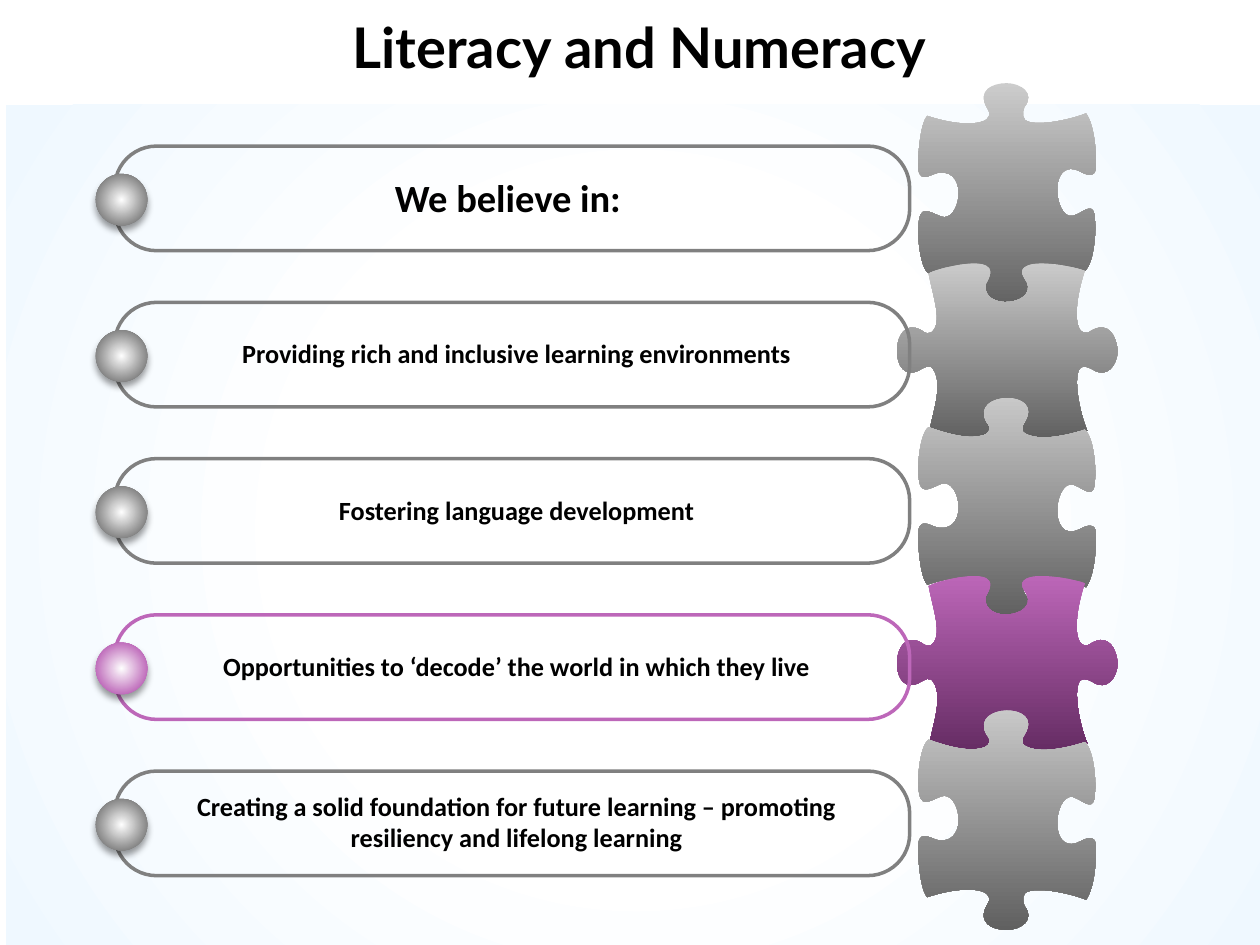
from lxml import etree
from pptx import Presentation
from pptx.dml.color import RGBColor
from pptx.enum.shapes import MSO_SHAPE
from pptx.enum.text import MSO_AUTO_SIZE, PP_ALIGN
from pptx.oxml.ns import qn
from pptx.util import Inches, Pt

RECTANGLE = MSO_SHAPE.RECTANGLE
ROUNDED = MSO_SHAPE.ROUNDED_RECTANGLE
OVAL = MSO_SHAPE.OVAL
CENTER = PP_ALIGN.CENTER
GROW = MSO_AUTO_SIZE.SHAPE_TO_FIT_TEXT

COLORS = {
    "white": "FFFFFF", "sky": "EFF8FF", "text": "000000",
    "gray": "808080", "light_gray": "CCCCCC", "dark_gray": "606060",
    "purple": "BD67B9", "dark_purple": "652C63",
}

ROW_TOP, ROW_STEP = 1.16, 1.24
BAR_LEFT, BAR_WIDTH, BAR_HEIGHT = 0.91, 6.31, 0.83
BALL_SIZE = 0.41
PIECE_STEP = 2.48   # distance between pieces of the same form
MIRROR_SUM = 5.56   # y of a point plus y of its mirrored point

# Text, size, centre of the text box, its width and height, accent colour
ROWS = [
    ("We believe in:", 22, 4.03, 2.29, 0.47, "gray"),
    ("Providing rich and inclusive learning environments", 15, 4.1, 5.81, 0.35, "gray"),
    ("Fostering language development", 15, 4.1, 5.81, 0.35, "gray"),
    ("Opportunities to ‘decode’ the world in which they live", 15, 4.1, 5.81, 0.35, "purple"),
    ("Creating a solid foundation for future learning – promoting resiliency "
     "and lifelong learning", 15, 4.1, 5.81, 0.61, "gray"),
]

# Puzzle outlines: start point, then three points for each Bézier curve
TALL_PIECE = [
    (7.99, 0.66),
    (8.1, 0.66), (8.22, 0.74), (8.13, 0.85), (8.12, 0.87), (8.12, 0.89), (8.12, 0.92),
    (8.12, 1.02), (8.44, 0.97), (8.62, 0.9), (8.69, 1), (8.7, 1.22), (8.7, 1.31),
    (8.7, 1.39), (8.66, 1.41), (8.57, 1.36), (8.3, 1.23), (8.37, 1.82), (8.55, 1.7),
    (8.6, 1.68), (8.69, 1.59), (8.69, 1.75), (8.7, 1.8), (8.69, 2.08), (8.61, 2.15),
    (8.52, 2.12), (8.24, 2.04), (8.12, 2.13), (8.11, 2.15), (8.11, 2.18), (8.13, 2.21),
    (8.3, 2.47), (7.69, 2.46), (7.83, 2.21), (7.87, 2.17), (7.86, 2.11), (7.78, 2.1),
    (7.7, 2.08), (7.56, 2.1), (7.37, 2.17), (7.3, 2.12), (7.28, 1.86), (7.29, 1.79),
    (7.3, 1.62), (7.37, 1.68), (7.47, 1.72), (7.62, 1.77), (7.69, 1.35), (7.46, 1.37),
    (7.4, 1.37), (7.31, 1.46), (7.29, 1.35), (7.28, 1.28), (7.3, 0.98), (7.36, 0.92),
    (7.63, 1.01), (7.83, 0.99), (7.85, 0.92), (7.86, 0.91), (7.85, 0.88), (7.83, 0.85),
    (7.76, 0.72), (7.87, 0.66), (7.99, 0.66),
]
WIDE_PIECE = [
    (8.87, 2.78),
    (8.87, 2.9), (8.78, 3.01), (8.67, 2.93), (8.65, 2.92), (8.63, 2.91), (8.6, 2.91),
    (8.5, 2.91), (8.56, 3.26), (8.63, 3.42), (8.54, 3.43), (8.33, 3.49), (8.23, 3.48),
    (8.17, 3.47), (8.08, 3.43), (8.14, 3.35), (8.28, 3.09), (7.74, 3.1), (7.82, 3.32),
    (7.86, 3.4), (7.91, 3.44), (7.76, 3.48), (7.69, 3.49), (7.47, 3.42), (7.38, 3.41),
    (7.4, 3.28), (7.5, 3.02), (7.39, 2.91), (7.37, 2.9), (7.35, 2.91), (7.31, 2.93),
    (7.05, 3.09), (7.06, 2.48), (7.31, 2.62), (7.35, 2.65), (7.37, 2.65), (7.39, 2.64),
    (7.49, 2.57), (7.4, 2.34), (7.37, 2.17), (7.45, 2.13), (7.64, 2.09), (7.74, 2.09),
    (7.91, 2.1), (7.86, 2.19), (7.82, 2.26), (7.8, 2.47), (8.23, 2.42), (8.15, 2.24),
    (8.12, 2.19), (8.07, 2.13), (8.18, 2.1), (8.28, 2.07), (8.54, 2.12), (8.61, 2.15),
    (8.52, 2.42), (8.53, 2.62), (8.6, 2.64), (8.62, 2.65), (8.64, 2.64), (8.67, 2.62),
    (8.8, 2.55), (8.86, 2.67), (8.87, 2.78),
]


def add_node(parent, tag, **attributes):
    node = etree.SubElement(parent, qn(tag))
    for name, value in attributes.items():
        node.set(name, str(value))
    return node


def set_gradient(shape, stops, radial=False):
    """Fill from top to bottom, or from the middle outwards."""
    shape.fill.gradient()
    gradient = shape._element.spPr.find(qn("a:gradFill"))
    for child in list(gradient):
        gradient.remove(child)
    stop_list = add_node(gradient, "a:gsLst")
    for percent, color in stops:
        stop = add_node(stop_list, "a:gs", pos=percent * 1000)
        add_node(stop, "a:srgbClr", val=COLORS[color])
    if radial:
        circle = add_node(gradient, "a:path", path="circle")
        add_node(circle, "a:fillToRect", l=50000, t=50000, r=50000, b=50000)
    else:
        add_node(gradient, "a:lin", ang=90 * 60000, scaled=0)


def add_plain_shape(slide, kind, left, top, width, height):
    shape = slide.shapes.add_shape(
        kind, Inches(left), Inches(top), Inches(width), Inches(height))
    shape.shadow.inherit = False
    shape.line.fill.background()
    return shape


def add_text(slide, text, left, top, width, height, size, font):
    box = slide.shapes.add_textbox(
        Inches(left), Inches(top), Inches(width), Inches(height))
    frame = box.text_frame
    frame.word_wrap = True
    frame.auto_size = GROW
    paragraph = frame.paragraphs[0]
    paragraph.alignment = CENTER
    run = paragraph.add_run()
    run.text = text
    run.font.name = font
    run.font.size = Pt(size)
    run.font.bold = True
    run.font.color.rgb = RGBColor.from_string(COLORS["text"])


def bend_lines(shape):
    """Turn each three line segments of a freeform into one Bézier curve."""
    lines = list(shape._element.iter(qn("a:lnTo")))
    for i in range(0, len(lines), 3):
        curve = etree.Element(qn("a:cubicBezTo"))
        lines[i].addprevious(curve)
        for line in lines[i:i + 3]:
            curve.append(line[0])
            line.getparent().remove(line)


def add_piece(slide, outline, top_color, bottom_color, shift=0):
    points = [(Inches(x), Inches(y + shift)) for x, y in outline]
    builder = slide.shapes.build_freeform(*points[0])
    builder.add_line_segments(points[1:], close=True)
    piece = builder.convert_to_shape()
    bend_lines(piece)
    piece.shadow.inherit = False
    piece.line.fill.background()
    set_gradient(piece, [(0, top_color), (100, bottom_color)])


def add_ball(slide, left, top, color):
    ball = add_plain_shape(slide, OVAL, left, top, BALL_SIZE, BALL_SIZE)
    set_gradient(ball, [(0, "white"), (75, color), (100, color)], radial=True)
    effects = ball._element.spPr.find(qn("a:effectLst"))
    shadow = add_node(effects, "a:outerShdw", blurRad=Pt(4), dist=Pt(3),
                      dir=90 * 60000, algn="ctr", rotWithShape=0)
    shadow_color = add_node(shadow, "a:srgbClr", val=COLORS["text"])
    add_node(shadow_color, "a:alpha", val=40000)


def add_row(slide, index, text, size, text_center, width, height, color):
    top = ROW_TOP + index * ROW_STEP
    middle = top + BAR_HEIGHT / 2
    bar = add_plain_shape(slide, ROUNDED, BAR_LEFT, top, BAR_WIDTH, BAR_HEIGHT)
    bar.adjustments[0] = 0.4
    bar.fill.background()
    bar.line.color.rgb = RGBColor.from_string(COLORS[color])
    bar.line.width = Pt(2)
    add_ball(slide, 0.76, middle - BALL_SIZE / 2 + 0.01, color)
    add_text(slide, text, text_center - width / 2, middle - height / 2 - 0.01,
             width, height, size, "Calibri")


def main():
    presentation = Presentation()
    presentation.slide_width = Inches(10)
    presentation.slide_height = Inches(7.5)
    slide = presentation.slides.add_slide(presentation.slide_layouts[6])

    # Background glow
    glow = add_plain_shape(slide, RECTANGLE, 0.05, 0.83, 10, 6.76)
    set_gradient(glow, [(0, "white"), (43, "white"), (100, "sky")], radial=True)

    # Puzzle column, from top to bottom
    grays = ("light_gray", "dark_gray")
    mirrored_piece = [(x, MIRROR_SUM - y) for x, y in TALL_PIECE]
    add_piece(slide, TALL_PIECE, *grays)
    add_piece(slide, WIDE_PIECE, *grays)
    add_piece(slide, mirrored_piece, *grays)
    add_piece(slide, WIDE_PIECE, "purple", "dark_purple", PIECE_STEP)
    add_piece(slide, mirrored_piece, *grays, PIECE_STEP)

    # Title and belief rows
    add_text(slide, "Literacy and Numeracy", 0.2, 0.05, 9.75, 0.64, 32, "Lato")
    for index, row in enumerate(ROWS):
        add_row(slide, index, *row)

    presentation.save("out.pptx")


if __name__ == "__main__":
    main()
